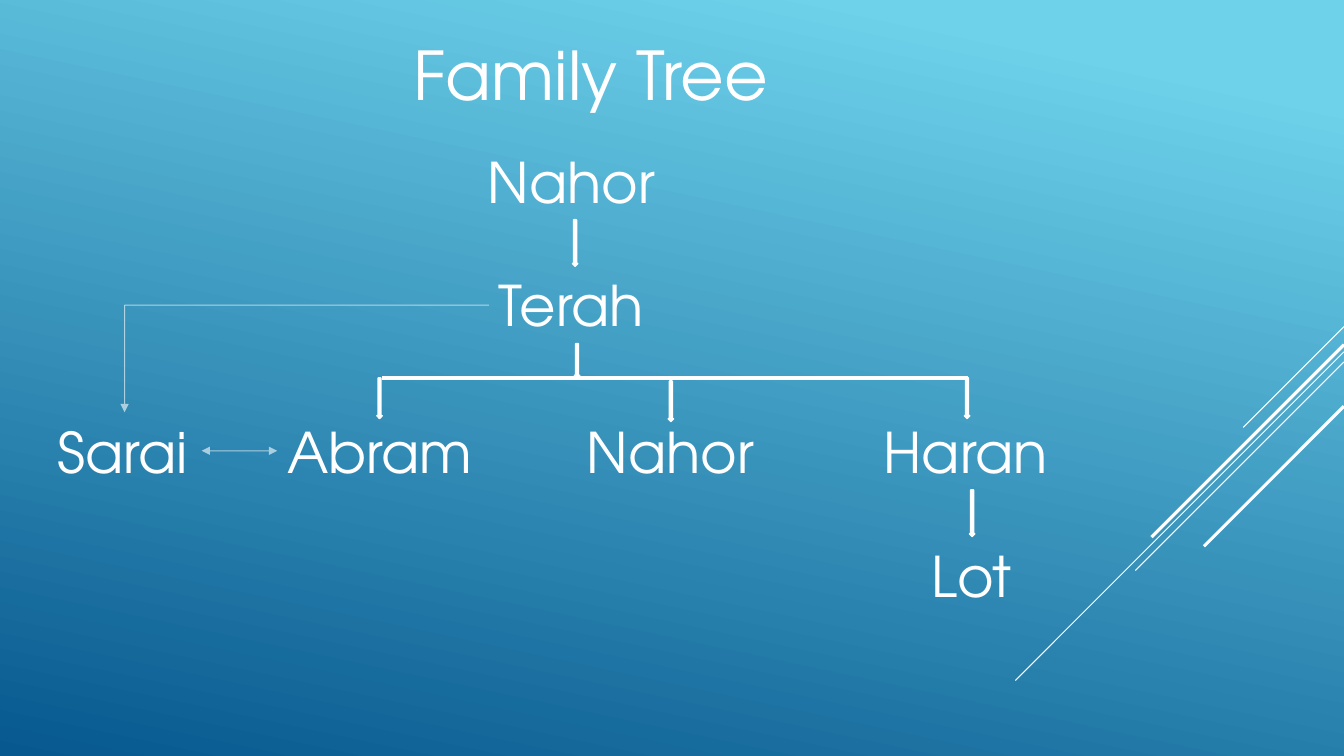
from lxml import etree
from pptx import Presentation
from pptx.dml.color import RGBColor
from pptx.enum import shapes, text
from pptx.oxml.ns import qn
from pptx.util import Pt

COLORS = {"white": "FFFFFF", "sky": "6ED2EB", "deep": "06588E"}
WIDTH, HEIGHT = 960, 540


def rgb(name):
    return RGBColor.from_string(COLORS[name])


class Board:
    """Holds the style and the current slide; lengths are in points."""

    font = "TeX Gyre Adventor"
    ink = "white"

    def __init__(self, slide):
        self.s = slide

    def background(self, stops, angle):
        fill = self.s.background.fill
        fill.gradient()
        fill.gradient_angle = angle
        for stop, (position, color) in zip(fill.gradient_stops, stops):
            stop.position = position
            stop.color.rgb = rgb(color)

    def label(self, words, x, y, w, h, size=40, wrap=False):
        sp = self.s.shapes.add_textbox(Pt(x), Pt(y), Pt(w), Pt(h))
        tf = sp.text_frame
        tf.word_wrap = wrap
        if wrap:
            tf.vertical_anchor = text.MSO_ANCHOR.MIDDLE
        else:
            tf.auto_size = text.MSO_AUTO_SIZE.SHAPE_TO_FIT_TEXT
        p = tf.paragraphs[0]
        p.text = words
        p.font.name = self.font
        p.font.size = Pt(size)
        p.font.color.rgb = rgb(self.ink)

    def down_arrow(self, x, y, h, w=3.6):
        sp = self.s.shapes.add_shape(
            shapes.MSO_SHAPE.DOWN_ARROW, Pt(x), Pt(y), Pt(w), Pt(h))
        sp.shadow.inherit = False
        sp.fill.solid()
        sp.fill.fore_color.rgb = rgb(self.ink)
        sp.line.color.rgb = rgb(self.ink)
        sp.line.width = Pt(1.25)

    def line(self, x1, y1, x2, y2, width=0.75, alpha=None, ends=(), bent=False):
        kind = shapes.MSO_CONNECTOR.ELBOW if bent else shapes.MSO_CONNECTOR.STRAIGHT
        c = self.s.shapes.add_connector(kind, Pt(x1), Pt(y1), Pt(x2), Pt(y2))
        c.line.color.rgb = rgb(self.ink)
        c.line.width = Pt(width)
        props = c._element.spPr
        if bent:  # a single corner instead of two
            props.find(qn("a:prstGeom")).set("prst", "bentConnector2")
        ln = props.find(qn("a:ln"))
        if alpha:
            color = ln.find(".//" + qn("a:srgbClr"))
            etree.SubElement(color, qn("a:alpha")).set("val", str(alpha * 1000))
        for end in ends:
            etree.SubElement(ln, qn("a:" + end)).set("type", "triangle")
        etree.SubElement(props, qn("a:effectLst"))


def main():
    prs = Presentation()
    prs.slide_width, prs.slide_height = Pt(WIDTH), Pt(HEIGHT)
    board = Board(prs.slides.add_slide(prs.slide_layouts[6]))
    board.background([(0.1, "sky"), (1, "deep")], 258)

    # Diagonal strokes, all at 45 degrees from the right edge
    for y, run, width in [(233.3, 72, 0.75), (251.3, 234.7, 0.75),
                          (258.5, 149, 0.75), (246.2, 137.5, 2.25),
                          (290.2, 100, 2.25)]:
        board.line(WIDTH, y, WIDTH - run, y + run, width)

    # Title
    board.label("Family Tree", 288, 18, 672, 69, size=48, wrap=True)

    # Names, one row per generation
    name_h = 55.4
    generations = [
        (101.5, [("Nahor", 341.3, 135.4)]),
        (190, [("Terah", 349.2, 122.4)]),
        (294.5, [("Sarai", 33.8, 110.2), ("Abram", 198, 149.8),
                 ("Nahor", 411.8, 135.4), ("Haran", 624.2, 133.9)]),
        (383, [("Lot", 658.1, 73.4)]),
    ]
    for y, people in generations:
        for name, x, w in people:
            board.label(name, x, y, w, name_h)

    # Descent: arrows and the bar that joins the siblings
    bar_y = 270
    board.line(272.9, bar_y, 691.2, bar_y, 2.25)
    for x, y, h in [(409, 157, 33.1), (410.4, 245.5, 24.5),
                    (269.3, bar_y, 28.8), (477.4, bar_y + 2.2, 28.8),
                    (689, bar_y, 28.8), (692.6, 350, 33.1)]:
        board.down_arrow(x, y, h)

    # Sarai: daughter of Terah, wife of Abram
    board.line(349.2, 218, 89, 294.5, alpha=60, ends=["tailEnd"], bent=True)
    board.line(144, 322, 198, 322, alpha=60, ends=["headEnd", "tailEnd"])

    prs.save("out.pptx")


if __name__ == "__main__":
    main()
